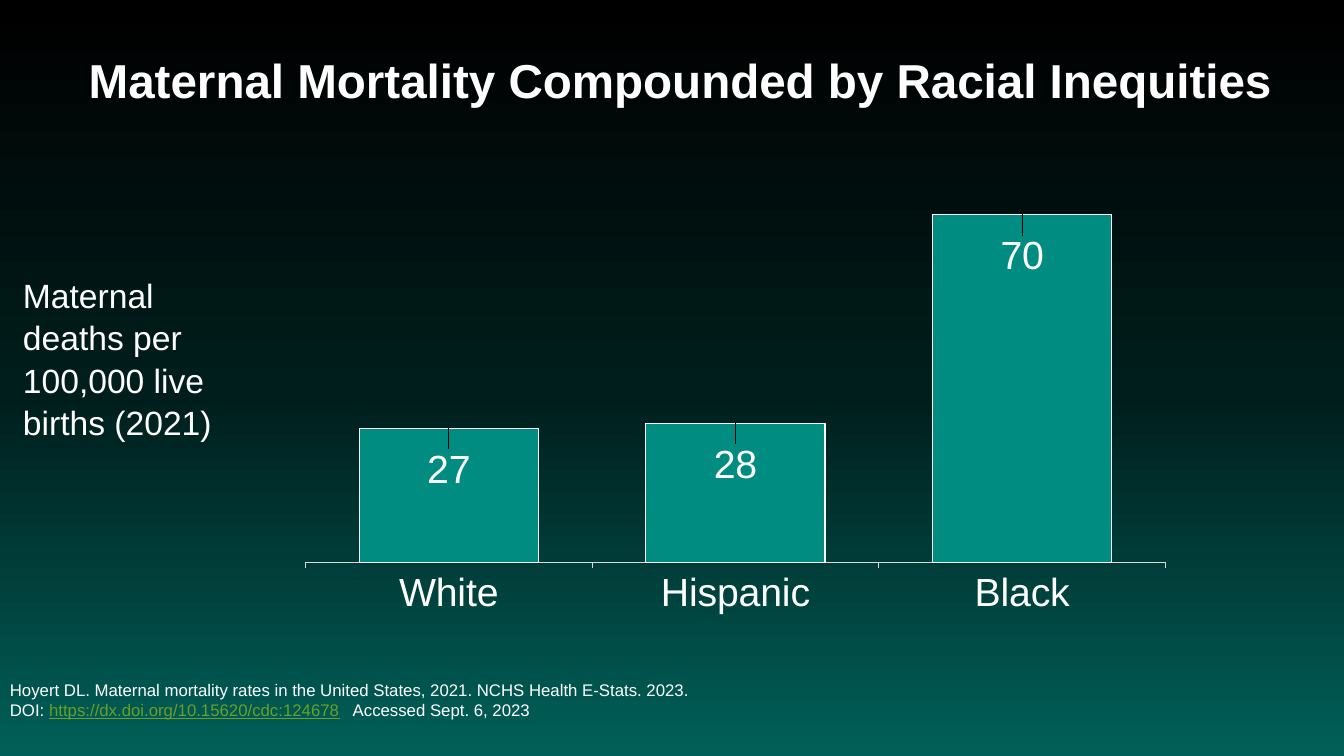
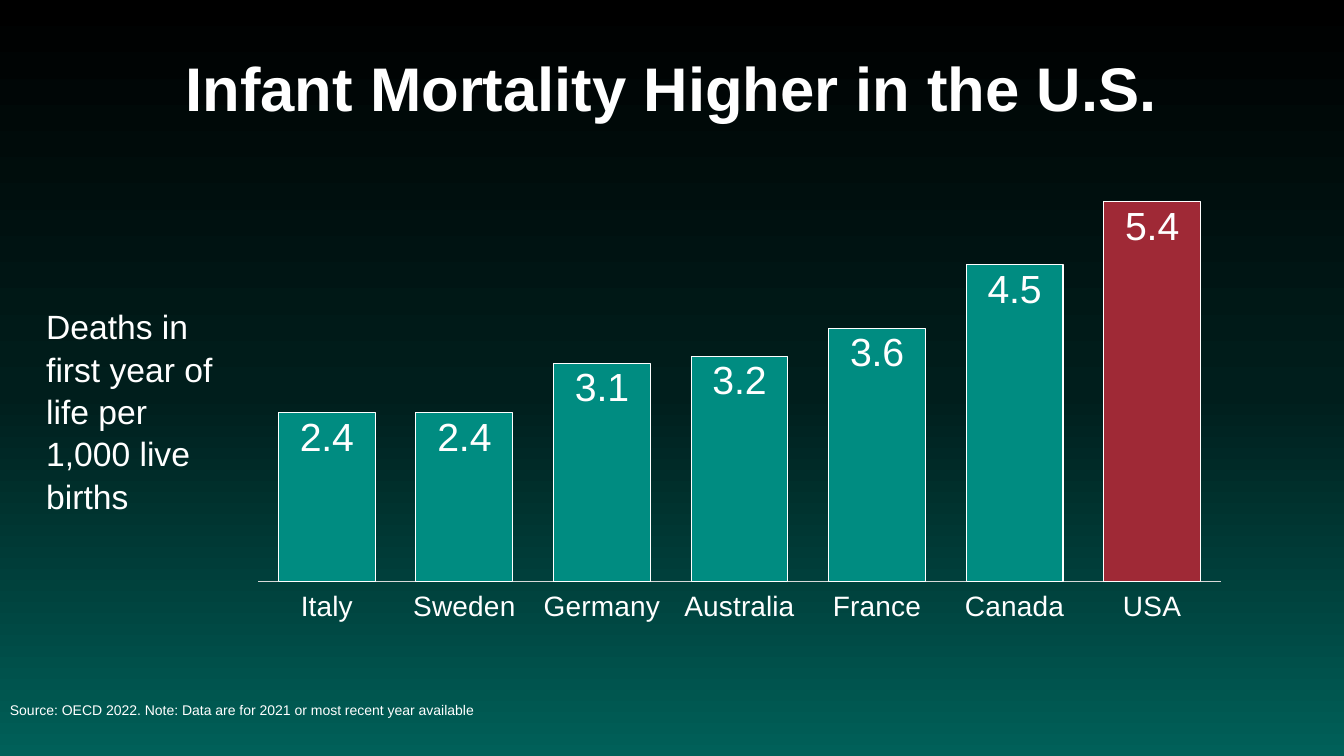
from copy import deepcopy

from lxml.etree import SubElement
from pptx import Presentation
from pptx.chart.data import CategoryChartData
from pptx.dml.color import RGBColor
from pptx.enum.chart import XL_CHART_TYPE as ChartType
from pptx.enum.chart import XL_LABEL_POSITION as LabelPosition
from pptx.enum.chart import XL_TICK_LABEL_POSITION as TickLabels
from pptx.enum.chart import XL_TICK_MARK as TickMark
from pptx.enum.text import MSO_ANCHOR as Anchor
from pptx.enum.text import MSO_AUTO_SIZE as AutoSize
from pptx.enum.text import PP_ALIGN as Align
from pptx.oxml.ns import qn
from pptx.util import Inches, Pt

WHITE = RGBColor(0xFF, 0xFF, 0xFF)
TEAL = RGBColor(0x00, 0x8C, 0x81)
RED = RGBColor(0x9F, 0x29, 0x36)
LINK_GREEN = RGBColor(0x6B, 0x9F, 0x25)
AXIS_GRAY = RGBColor(0xD9, 0xD9, 0xD9)
BACKGROUND_STOPS = [
    (0, RGBColor(0x00, 0x00, 0x00)),
    (0.52, RGBColor(0x00, 0x1E, 0x1C)),
    (1, RGBColor(0x00, 0x60, 0x59)),
]
FONT = "Arial"
TITLE_ONLY = 5


class MortalityDeck:
    """Holds the shared style and the current slide."""

    def __init__(self):
        self.deck = Presentation()
        self.deck.slide_width = Inches(13.33)
        self.deck.slide_height = Inches(7.5)
        self.page = None
        self.paint_background()

    def paint_background(self):
        master = self.deck.slide_master
        fill = master.background.fill
        fill.gradient()
        fill.gradient_angle = 270
        stop_list = master.element.find(".//" + qn("a:gsLst"))
        stop_list.append(deepcopy(stop_list[0]))
        for stop, (position, color) in zip(fill.gradient_stops, BACKGROUND_STOPS):
            stop.position = position
            stop.color.rgb = color

    def style(self, font, size, bold=False):
        font.name = FONT
        font.size = Pt(size)
        font.bold = bold
        font.color.rgb = WHITE

    def add_page(self, title, left, top, width, height, size):
        self.page = self.deck.slides.add_slide(self.deck.slide_layouts[TITLE_ONLY])
        box = self.page.shapes.title
        box.left, box.top = Inches(left), Inches(top)
        box.width, box.height = Inches(width), Inches(height)
        frame = box.text_frame
        frame.text = title
        frame.auto_size = AutoSize.NONE
        frame.vertical_anchor = Anchor.MIDDLE
        para = frame.paragraphs[0]
        para.alignment = Align.LEFT
        para.line_spacing = 0.9
        self.style(para.font, size, bold=True)

    def add_box(self, left, top, width, height):
        box = self.page.shapes.add_textbox(
            Inches(left), Inches(top), Inches(width), Inches(height)
        )
        box.text_frame.word_wrap = True
        return box.text_frame

    def add_measure(self, text, left, top, width, height):
        frame = self.add_box(left, top, width, height)
        frame.auto_size = AutoSize.SHAPE_TO_FIT_TEXT
        para = frame.paragraphs[0]
        para.text = text
        para.line_spacing = 1.05
        para.space_after = Pt(12)
        self.style(para.font, 24)

    def add_source(self, text, width, size, bottom_margin=0.05):
        frame = self.add_box(0, 6.58, width, 0.92)
        frame.vertical_anchor = Anchor.MIDDLE
        frame.margin_bottom = Inches(bottom_margin)
        para = frame.paragraphs[0]
        para.text = text
        self.style(para.font, size)
        return frame

    def add_doi(self, frame, label, address, accessed, size, tab):
        para = frame.add_paragraph()
        tabs = SubElement(para._p.get_or_add_pPr(), qn("a:tabLst"))
        SubElement(tabs, qn("a:tab"), pos=str(Inches(tab)), algn="l")
        self.style(para.font, size)
        for text in (label, address, "\t" + accessed):
            span = para.add_run()
            span.text = text
            if text == address:
                span.font.underline = True
                span.font.color.rgb = LINK_GREEN

    def add_columns(self, values, area, plot, top_value, gap, overlap,
                    axis_size, number_format, tick=TickMark.NONE):
        data = CategoryChartData(number_format=number_format)
        data.categories = list(values)
        data.add_series("Series 1", list(values.values()))
        chart = self.page.shapes.add_chart(
            ChartType.COLUMN_CLUSTERED, *map(Inches, area), data
        ).chart
        chart.has_legend = False
        chart.has_title = False
        self.style(chart.font, axis_size)
        self.set_layout(chart._chartSpace.chart.plotArea, area, plot)

        heights = chart.value_axis
        heights.visible = False
        heights.has_major_gridlines = False
        heights.minimum_scale, heights.maximum_scale = 0, top_value

        names = chart.category_axis
        names.major_tick_mark = tick
        names.tick_label_position = TickLabels.LOW
        names.format.line.color.rgb = AXIS_GRAY
        names.format.line.width = Pt(0.75)
        self.style(names.tick_labels.font, axis_size)

        columns = chart.plots[0]
        columns.vary_by_categories = False
        columns.gap_width, columns.overlap = gap, overlap
        series = columns.series[0]
        self.paint_column(series, TEAL)
        labels = series.data_labels
        labels.show_value = True
        labels.position = LabelPosition.INSIDE_END
        labels.number_format = number_format
        labels.number_format_is_linked = False
        self.style(labels.font, 28)
        return series

    def set_layout(self, plot_area, area, plot):
        left, top, width, height = area
        fractions = {
            "x": (plot[0] - left) / width,
            "y": (plot[1] - top) / height,
            "w": plot[2] / width,
            "h": plot[3] / height,
        }
        for old in plot_area.findall(qn("c:layout")):
            plot_area.remove(old)
        layout = SubElement(plot_area, qn("c:layout"))
        plot_area.insert(0, layout)
        manual = SubElement(layout, qn("c:manualLayout"))
        SubElement(manual, qn("c:layoutTarget"), val="inner")
        for side in "xy":
            SubElement(manual, qn(f"c:{side}Mode"), val="edge")
        for name, fraction in fractions.items():
            SubElement(manual, qn(f"c:{name}"), val=f"{fraction:.4f}")

    def paint_column(self, column, color):
        column.format.fill.solid()
        column.format.fill.fore_color.rgb = color
        column.format.line.color.rgb = WHITE
        column.format.line.width = Pt(0.75)

    def lower_labels(self, series, drop):
        for index in range(len(series.values)):
            label = series.points[index].data_label
            label.position = LabelPosition.INSIDE_END
            self.style(label.font, 28)
            element = series.data_labels._element.findall(qn("c:dLbl"))[index]
            layout = SubElement(element, qn("c:layout"))
            element.insert(1, layout)
            manual = SubElement(layout, qn("c:manualLayout"))
            SubElement(manual, qn("c:x"), val="0")
            SubElement(manual, qn("c:y"), val=str(drop))


def main():
    slides = MortalityDeck()

    slides.add_page("Maternal Mortality Compounded by Racial Inequities",
                    0.78, 0.1, 12, 1.45, size=34)
    source = slides.add_source(
        "Hoyert DL. Maternal mortality rates in the United States, 2021. "
        "NCHS Health E-Stats. 2023.",
        width=9, size=12, bottom_margin=0.25,
    )
    slides.add_doi(source, "DOI: ", "https://dx.doi.org/10.15620/cdc:124678",
                   "Accessed Sept. 6, 2023", size=12, tab=3.4)
    slides.add_measure("Maternal deaths per 100,000 live births (2021)",
                       0.13, 2.66, 2.33, 1.72)
    maternal = slides.add_columns(
        {"White": 27, "Hispanic": 28, "Black": 70},
        area=(2.86, 1.55, 8.89, 4.65), plot=(3.03, 1.64, 8.53, 3.94),
        top_value=80, gap=60, overlap=-90, axis_size=28,
        number_format="0", tick=TickMark.OUTSIDE,
    )
    slides.lower_labels(maternal, 0.035)

    slides.add_page("Infant Mortality Higher in the U.S.",
                    1.74, 0.36, 10.28, 1.09, size=44)
    slides.add_source(
        "Source: OECD 2022. Note: Data are for 2021 or most recent year available",
        width=9.32, size=10,
    )
    infant = slides.add_columns(
        {"Italy": 2.4, "Sweden": 2.4, "Germany": 3.1, "Australia": 3.2,
         "France": 3.6, "Canada": 4.5, "USA": 5.4},
        area=(2.36, 1.85, 9.95, 4.37), plot=(2.56, 1.93, 9.55, 3.84),
        top_value=5.5, gap=42, overlap=-27, axis_size=20,
        number_format="#,##0.0",
    )
    slides.paint_column(infant.points[6], RED)
    slides.add_measure("Deaths in first year of life per 1,000 live births",
                       0.36, 2.97, 2.11, 2.12)

    slides.deck.save("out.pptx")


if __name__ == "__main__":
    main()
